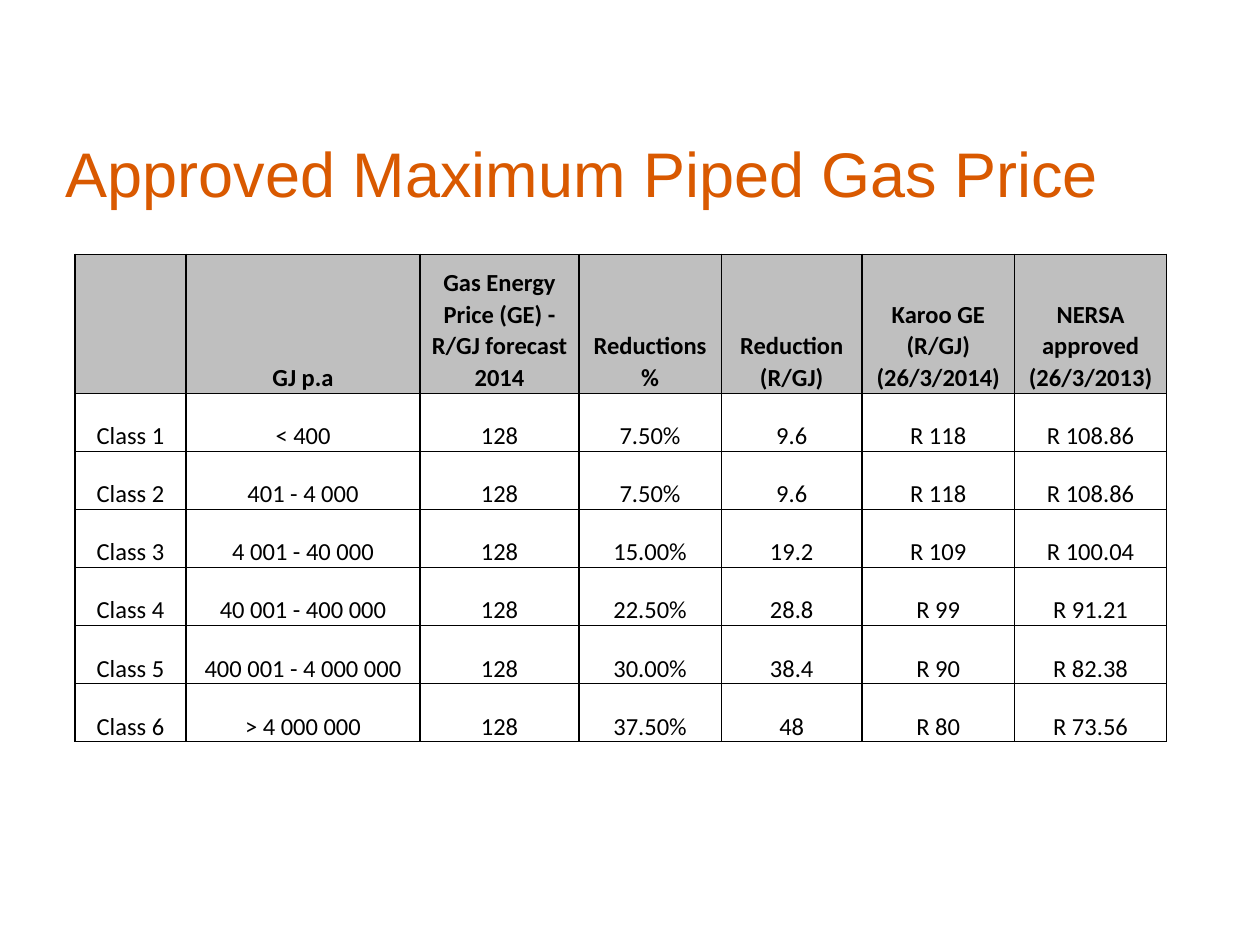
"""Build a slide with a table of approved maximum piped gas prices."""
from lxml import etree
from pptx import Presentation
from pptx.dml.color import RGBColor
from pptx.enum.text import MSO_ANCHOR, MSO_AUTO_SIZE, PP_ALIGN
from pptx.oxml.ns import qn
from pptx.util import Cm, Pt

CENTER, LEFT = PP_ALIGN.CENTER, PP_ALIGN.LEFT
BOTTOM, MIDDLE = MSO_ANCHOR.BOTTOM, MSO_ANCHOR.MIDDLE
NO_AUTOFIT = MSO_AUTO_SIZE.NONE
ORANGE = RGBColor(0xD9, 0x59, 0x00)
BLACK = RGBColor(0x00, 0x00, 0x00)
GREY = RGBColor(0xBF, 0xBF, 0xBF)

COL_WIDTHS = [2.24, 4.72, 3.2, 2.87, 2.84, 3.07, 3.07]
HEADER_HEIGHT, ROW_HEIGHT = 2.8, 1.17
ROWS = [
    ["", "GJ p.a", "Gas Energy Price (GE) - R/GJ forecast 2014", "Reductions %",
     "Reduction (R/GJ)", "Karoo GE (R/GJ) (26/3/2014)", "NERSA approved (26/3/2013)"],
    ["Class 1", "< 400", "128", "7.50%", "9.6", "R 118", "R 108.86"],
    ["Class 2", "401 - 4 000", "128", "7.50%", "9.6", "R 118", "R 108.86"],
    ["Class 3", "4 001 - 40 000", "128", "15.00%", "19.2", "R 109", "R 100.04"],
    ["Class 4", "40 001 - 400 000", "128", "22.50%", "28.8", "R 99", "R 91.21"],
    ["Class 5", "400 001 - 4 000 000", "128", "30.00%", "38.4", "R 90", "R 82.38"],
    ["Class 6", "> 4 000 000", "128", "37.50%", "48", "R 80", "R 73.56"],
]


def add_borders(cell):
    tcPr = cell._tc.get_or_add_tcPr()
    for side in ("a:lnL", "a:lnR", "a:lnT", "a:lnB"):
        ln = etree.SubElement(tcPr, qn(side), w=str(Pt(1)))
        fill = etree.SubElement(ln, qn("a:solidFill"))
        etree.SubElement(fill, qn("a:srgbClr"), val=str(BLACK))


prs = Presentation()
prs.slide_width, prs.slide_height = Cm(25.4), Cm(19.05)
s = prs.slides.add_slide(prs.slide_layouts[5])

title = s.shapes.title
title.left, title.top, title.width, title.height = Cm(1.07), Cm(2.82), Cm(22.45), Cm(1.32)
tf = title.text_frame
tf.text = "Approved Maximum Piped Gas Price"
tf.auto_size = NO_AUTOFIT
tf.vertical_anchor = MIDDLE
p = tf.paragraphs[0]
p.alignment = LEFT
p.font.name, p.font.size = "Arial", Pt(36)
p.font.color.rgb = ORANGE

height = HEADER_HEIGHT + ROW_HEIGHT * (len(ROWS) - 1)
table = s.shapes.add_table(len(ROWS), len(COL_WIDTHS), Cm(1.51), Cm(5.13),
                           Cm(sum(COL_WIDTHS)), Cm(height)).table
table.horz_banding = False
for column, width in zip(table.columns, COL_WIDTHS):
    column.width = Cm(width)

for i, values in enumerate(ROWS):
    header = i == 0
    table.rows[i].height = Cm(HEADER_HEIGHT if header else ROW_HEIGHT)
    for j, text in enumerate(values):
        cell = table.cell(i, j)
        add_borders(cell)
        if header:
            cell.fill.solid()
            cell.fill.fore_color.rgb = GREY
        else:
            cell.fill.background()
        cell.vertical_anchor = BOTTOM
        cell.margin_left = cell.margin_right = Cm(0.18)
        cell.margin_top = cell.margin_bottom = 0
        cell.text = text
        p = cell.text_frame.paragraphs[0]
        p.alignment = CENTER
        p.line_spacing = 1.07
        p.font.name, p.font.size, p.font.bold = "Calibri", Pt(14), header
        p.font.color.rgb = BLACK

prs.save("out.pptx")
